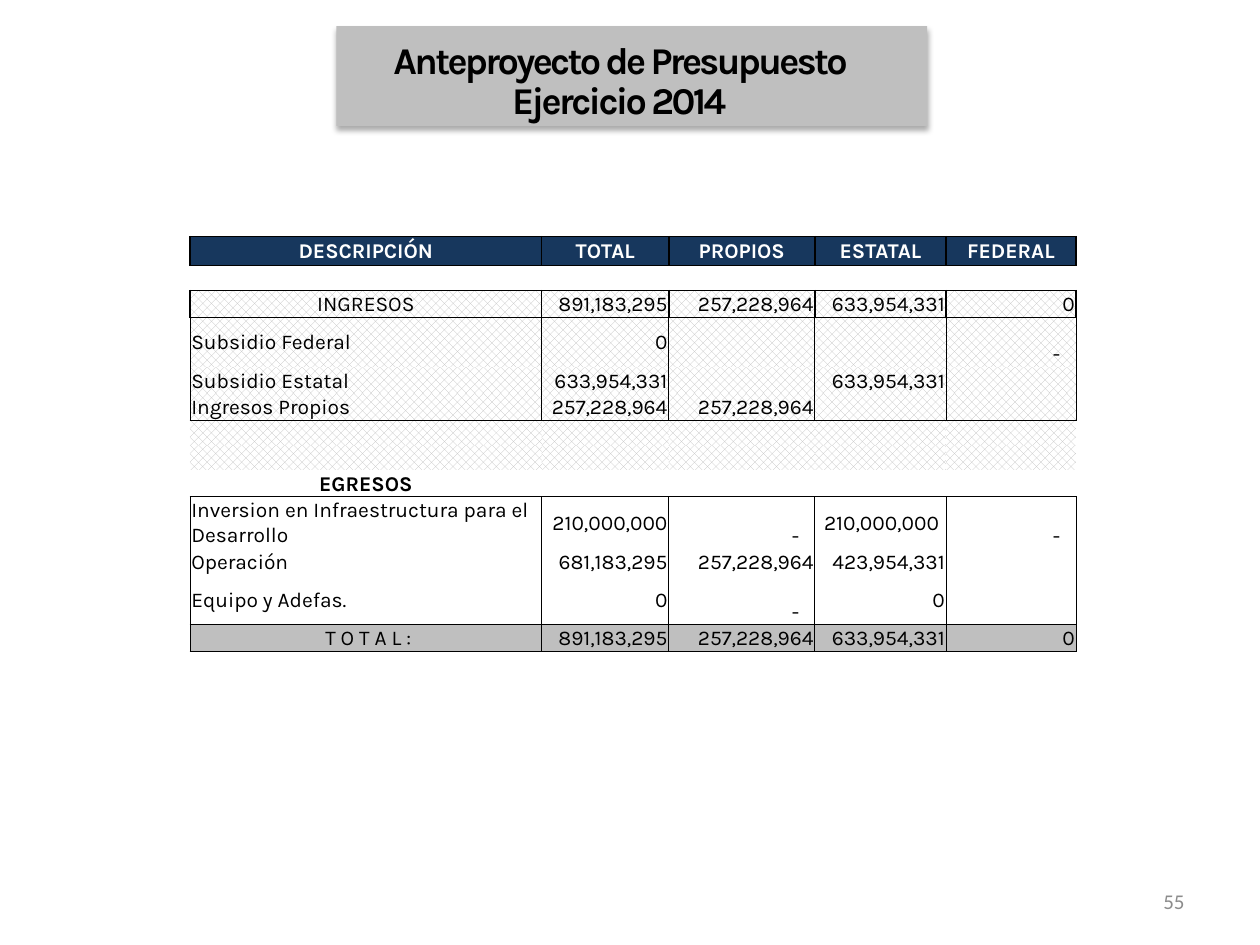
from dataclasses import dataclass

from lxml.etree import SubElement
from pptx import Presentation
from pptx.dml.color import RGBColor
from pptx.enum.dml import MSO_PATTERN
from pptx.enum.shapes import MSO_SHAPE
from pptx.enum.text import MSO_ANCHOR as Anchor, MSO_AUTO_SIZE as AutoSize, PP_ALIGN as Align
from pptx.oxml import parse_xml
from pptx.oxml.ns import nsdecls, qn
from pptx.util import Pt

COLORS = {
    "black": "000000",
    "white": "FFFFFF",
    "navy": "17375D",
    "silver": "BFBFBF",
    "hatch": "C0C0C0",
    "page_number": "8C8C8C",
}
FONT = "Karla"
LINE = 14.3
COLUMN_WIDTHS = (201, 72.6, 83.5, 75, 74.2)
THIN, THICK = 0.5, 1
MARGIN, DASH_MARGIN, SPACED_MARGIN = 0.72, 9, 4


@dataclass
class BudgetRow:
    texts: tuple = ("",) * 5
    fill: str = "white"
    top: float = 0  # width of the line above the row
    sides: float = 0  # width of the lines beside each cell
    lines: int = 1
    bold: bool = False
    color: str = "black"
    label_align: Align = Align.LEFT
    value_align: Align = Align.RIGHT
    height: float = 0


TOTALS = ("891,183,295", "257,228,964", "633,954,331", "0")
ROWS = [
    BudgetRow(("DESCRIPCIÓN", "TOTAL", "PROPIOS", "ESTATAL", "FEDERAL"), "navy", THICK, THICK,
              bold=True, color="white", label_align=Align.CENTER, value_align=Align.CENTER,
              height=16.6),
    BudgetRow(fill="none", top=THICK),
    BudgetRow(("INGRESOS", *TOTALS), "hatch", THICK, THICK, label_align=Align.CENTER),
    BudgetRow(("Subsidio Federal", "0", "", "", "-"), "hatch", THIN, THIN, lines=2),
    BudgetRow(("Subsidio Estatal", "633,954,331", "", "633,954,331", ""), "hatch", sides=THIN),
    BudgetRow(("Ingresos Propios", "257,228,964", "257,228,964", "", ""), "hatch", sides=THIN),
    BudgetRow(fill="hatch", top=THIN),
    BudgetRow(fill="hatch"),
    BudgetRow(("EGRESOS", "", "", "", ""), bold=True, label_align=Align.CENTER),
    BudgetRow(("Inversion en Infraestructura para el Desarrollo", "210,000,000", "-",
               "210,000,000 ", "-"), top=THIN, sides=THIN, lines=2),
    BudgetRow(("Operación", "681,183,295", "257,228,964", "423,954,331", ""), sides=THIN),
    BudgetRow(("Equipo y Adefas.", "0", "-", "0", ""), sides=THIN, lines=2),
    BudgetRow((" T O T A L :", *TOTALS), "silver", THIN, THIN, label_align=Align.CENTER),
]


def rgb(name: str) -> RGBColor:
    return RGBColor.from_string(COLORS[name])


def style_paragraph(para, size: float, font: str, color: str, align: Align, bold=False) -> None:
    para.alignment = align
    para.font.size = Pt(size)
    para.font.name = font
    para.font.bold = bold
    para.font.color.rgb = rgb(color)


def fill_cell(cell, name: str) -> None:
    if name == "none":
        cell.fill.background()
    elif name == "hatch":
        cell.fill.patterned()
        cell.fill.pattern = MSO_PATTERN.PERCENT_50
        cell.fill.fore_color.rgb = rgb("hatch")
        cell.fill.back_color.rgb = rgb("white")
    else:
        cell.fill.solid()
        cell.fill.fore_color.rgb = rgb(name)


def border_cell(cell, sides: float, top: float, bottom: float) -> None:
    properties = cell._tc.get_or_add_tcPr()
    edges = (("lnL", sides), ("lnR", sides), ("lnT", top), ("lnB", bottom))
    for index, (tag, width) in enumerate(edges):
        paint = (f'<a:solidFill><a:srgbClr val="{COLORS["black"]}"/></a:solidFill>'
                 if width else "<a:noFill/>")
        properties.insert(index, parse_xml(
            f'<a:{tag} {nsdecls("a")} w="{Pt(width)}">{paint}</a:{tag}>'))


def write_cell(cell, text: str, row: BudgetRow, align: Align) -> None:
    is_dash = text == "-"
    cell.margin_left = cell.margin_top = Pt(MARGIN)
    cell.margin_bottom = Pt(0)
    cell.margin_right = Pt(
        DASH_MARGIN if is_dash else SPACED_MARGIN if text.endswith(" ") else MARGIN)
    cell.vertical_anchor = Anchor.BOTTOM if is_dash else Anchor.MIDDLE
    para = cell.text_frame.paragraphs[0]
    if text:
        para.text = text.rstrip()
    else:
        # An empty cell must not stretch its row.
        SubElement(para._p, qn("a:endParaRPr"), sz="1000")
    style_paragraph(para, 12, FONT, row.color, align, row.bold)


def add_budget_table(page) -> None:
    heights = [row.height or row.lines * LINE for row in ROWS]
    table = page.shapes.add_table(
        len(ROWS), len(COLUMN_WIDTHS), Pt(108.6), Pt(135.2),
        Pt(sum(COLUMN_WIDTHS)), Pt(sum(heights))).table
    table.first_row = table.horz_banding = False
    for column, width in zip(table.columns, COLUMN_WIDTHS):
        column.width = Pt(width)
    bottoms = [row.top for row in ROWS[1:]] + [THIN]
    for index, (row, height, bottom) in enumerate(zip(ROWS, heights, bottoms)):
        table.rows[index].height = Pt(height)
        for column, text in enumerate(row.texts):
            cell = table.cell(index, column)
            write_cell(cell, text, row, row.value_align if column else row.label_align)
            fill_cell(cell, row.fill)
            border_cell(cell, row.sides, row.top, bottom)


def add_title_panel(page) -> None:
    panel = page.shapes.add_shape(MSO_SHAPE.RECTANGLE, Pt(192.2), Pt(15), Pt(337.7), Pt(57))
    panel.fill.solid()
    panel.fill.fore_color.rgb = rgb("silver")
    panel.line.fill.background()
    panel.shadow.inherit = False
    panel._element.spPr.find(qn("a:effectLst")).append(parse_xml(
        f'<a:outerShdw {nsdecls("a")} blurRad="{Pt(3.5)}" dist="{Pt(2.2)}" dir="5400000">'
        f'<a:srgbClr val="{COLORS["black"]}"><a:alpha val="32000"/></a:srgbClr></a:outerShdw>'))


def set_title(page) -> None:
    title = page.shapes.title
    title.left, title.top, title.width, title.height = Pt(192.2), Pt(20.2), Pt(323.3), Pt(36)
    frame = title.text_frame
    frame.text = "Anteproyecto de Presupuesto Ejercicio 2014"
    frame.word_wrap = True
    frame.auto_size = AutoSize.NONE
    frame.vertical_anchor = Anchor.TOP
    para = frame.paragraphs[0]
    style_paragraph(para, 21.6, FONT, "black", Align.CENTER, bold=True)
    para.line_spacing = Pt(23)
    para.runs[0].font._element.set("spc", "-150")
    page.shapes._spTree.append(title._element)  # in front of its panel


def add_page_number(page) -> None:
    box = page.shapes.add_textbox(Pt(516), Pt(500.5), Pt(168), Pt(28.8))
    frame = box.text_frame
    frame.word_wrap = True
    frame.vertical_anchor = Anchor.MIDDLE
    frame.text = "55"
    style_paragraph(frame.paragraphs[0], 12, "Calibri", "page_number", Align.RIGHT)


def main() -> None:
    deck = Presentation()
    deck.slide_width, deck.slide_height = Pt(720), Pt(540)
    page = deck.slides.add_slide(deck.slide_layouts[5])
    add_page_number(page)
    add_budget_table(page)
    add_title_panel(page)
    set_title(page)
    deck.save("out.pptx")


if __name__ == "__main__":
    main()
